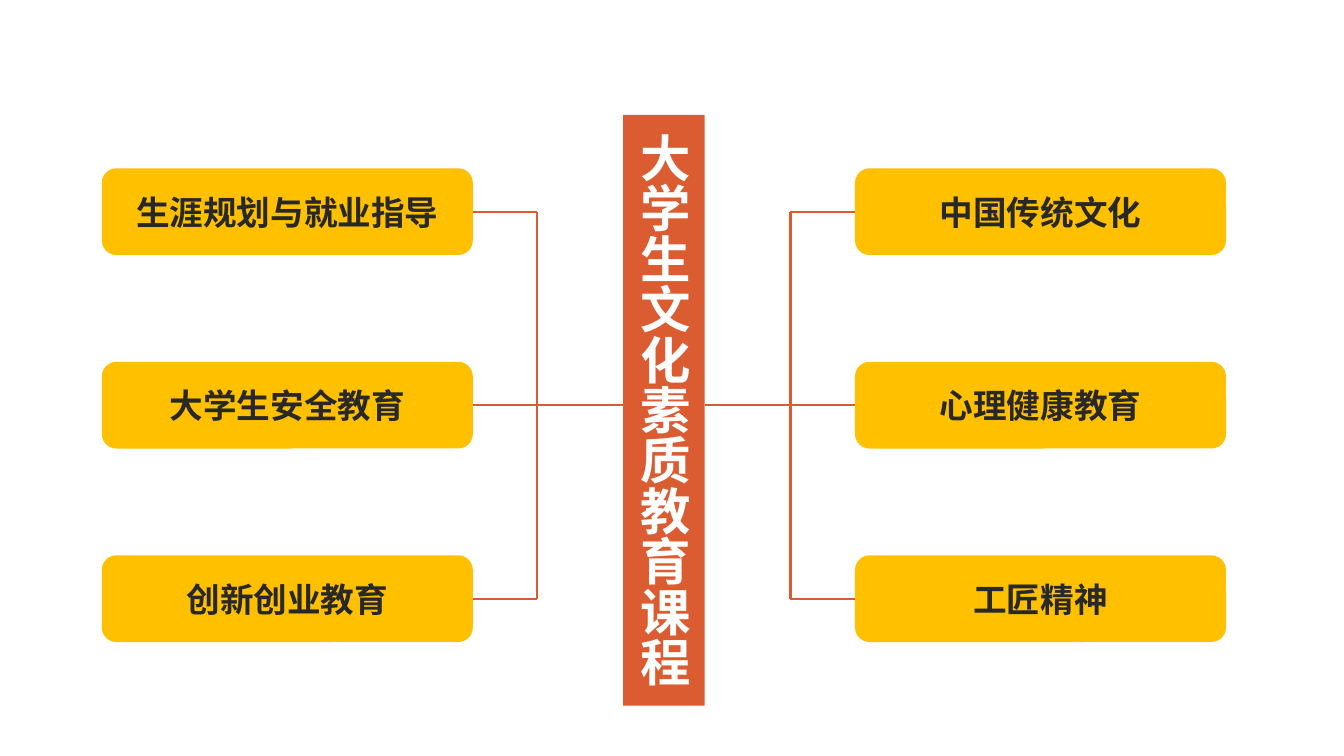
"""Build a slide that maps six courses to a central vertical banner."""
from typing import NamedTuple

import pptx
import pptx.dml.color
import pptx.enum.shapes
import pptx.enum.text
import pptx.oxml.ns
import pptx.util
from lxml import etree

Inches = pptx.util.Inches
Pt = pptx.util.Pt
ALIGN = pptx.enum.text.PP_ALIGN
ANCHOR = pptx.enum.text.MSO_ANCHOR

FONT = "Noto Sans CJK SC"
ORANGE, YELLOW, DARK, WHITE = "DC5C31", "FFC000", "282828", "FFFFFF"
BOX_W, BOX_H = 3.68, 0.86
ROW_TOP, ROW_PITCH = 1.67, 1.92
BANNER_L, BANNER_T, BANNER_W, BANNER_H = 6.18, 1.14, 0.81, 5.86


class Branch(NamedTuple):
    box_left: float
    box_site: int
    trunk_x: float
    banner_x: float
    courses: tuple[str, ...]


BRANCHES = (
    Branch(1.01, 3, 5.33, BANNER_L,
           ("生涯规划与就业指导", "大学生安全教育", "创新创业教育")),
    Branch(8.48, 1, 7.84, BANNER_L + BANNER_W,
           ("中国传统文化", "心理健康教育", "工匠精神")),
)


def rgb(value: str) -> pptx.dml.color.RGBColor:
    return pptx.dml.color.RGBColor.from_string(value)


def fill_solid(sp, color: str) -> None:
    sp.fill.solid()
    sp.fill.fore_color.rgb = rgb(color)
    sp.line.fill.background()


def write(sp, text: str, size: int, color: str, align, frame: dict) -> None:
    tf = sp.text_frame
    for name, value in frame.items():
        setattr(tf, name, value)
    p = tf.paragraphs[0]
    p.alignment = align
    r = p.add_run()
    r.text = text
    for name, value in {"name": FONT, "size": Pt(size), "bold": True}.items():
        setattr(r.font, name, value)
    r.font.color.rgb = rgb(color)
    ea = etree.SubElement(r._r.get_or_add_rPr(), pptx.oxml.ns.qn("a:ea"))
    ea.set("typeface", FONT)


def add_banner(s, text: str) -> None:
    sp = s.shapes.title
    place = {"left": BANNER_L, "top": BANNER_T, "width": BANNER_W, "height": BANNER_H}
    for name, value in place.items():
        setattr(sp, name, Inches(value))
    fill_solid(sp, ORANGE)
    write(sp, text, 36, WHITE, ALIGN.LEFT, {
        "word_wrap": True,
        "vertical_anchor": ANCHOR.TOP,
        "auto_size": pptx.enum.text.MSO_AUTO_SIZE.SHAPE_TO_FIT_TEXT,
        "margin_top": Inches(0.18),
    })
    sp.text_frame._txBody.bodyPr.set("vert", "eaVert")


def add_box(s, left: float, top: float, text: str):
    sp = s.shapes.add_shape(
        pptx.enum.shapes.MSO_SHAPE.ROUNDED_RECTANGLE,
        Inches(left), Inches(top), Inches(BOX_W), Inches(BOX_H))
    sp.shadow.inherit = False
    fill_solid(sp, YELLOW)
    write(sp, text, 24, DARK, ALIGN.CENTER,
          {"word_wrap": True, "vertical_anchor": ANCHOR.MIDDLE})
    return sp


def add_line(s, x1: float, y1: float, x2: float, y2: float):
    line = s.shapes.add_connector(
        pptx.enum.shapes.MSO_CONNECTOR.STRAIGHT,
        Inches(x1), Inches(y1), Inches(x2), Inches(y2))
    line.line.color.rgb = rgb(ORANGE)
    line.line.width = Pt(1.5)
    etree.SubElement(line._element.spPr, pptx.oxml.ns.qn("a:effectLst"))
    return line


def add_branch(s, branch: Branch) -> None:
    edge = branch.box_left + (BOX_W if branch.box_site == 3 else 0)
    middles = []
    for i, course in enumerate(branch.courses):
        top = ROW_TOP + i * ROW_PITCH
        y = top + BOX_H / 2
        middles.append(y)
        box = add_box(s, branch.box_left, top, course)
        end = branch.banner_x if i == 1 else branch.trunk_x
        add_line(s, edge, y, end, y).begin_connect(box, branch.box_site)
    add_line(s, branch.trunk_x, middles[0], branch.trunk_x, middles[-1])


def main() -> None:
    prs = pptx.Presentation()
    prs.slide_width, prs.slide_height = Inches(13.33), Inches(7.5)
    s = prs.slides.add_slide(prs.slide_layouts[5])
    add_banner(s, "大学生文化素质教育课程")
    for branch in BRANCHES:
        add_branch(s, branch)
    prs.save("out.pptx")


if __name__ == "__main__":
    main()
